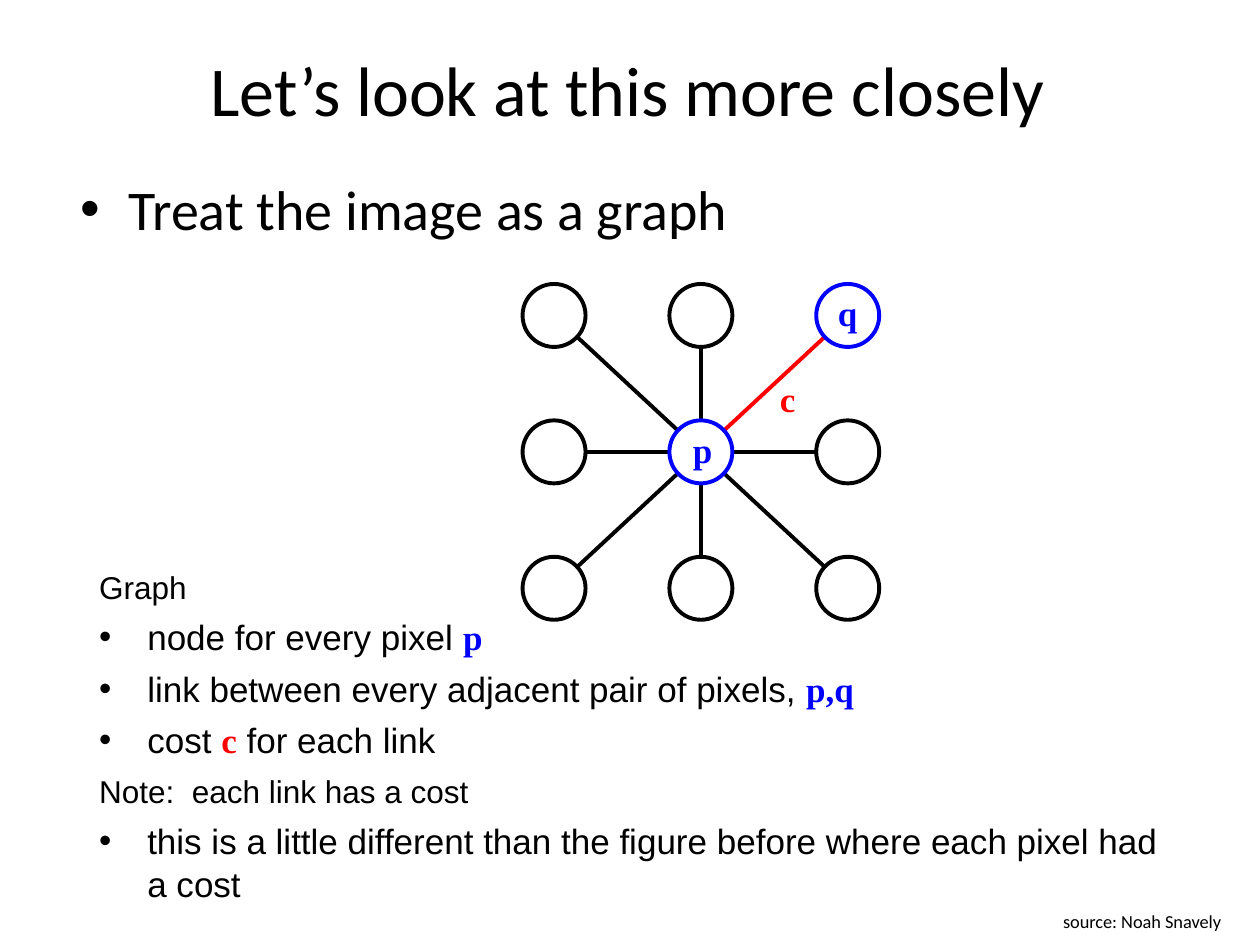
from lxml import etree
from pptx import Presentation
from pptx.dml.color import RGBColor
from pptx.enum.shapes import MSO_CONNECTOR, MSO_SHAPE
from pptx.enum.text import MSO_ANCHOR, PP_ALIGN
from pptx.oxml.ns import qn
from pptx.util import Cm, Pt

LINE = MSO_CONNECTOR.STRAIGHT
OVAL = MSO_SHAPE.OVAL
TOP, MIDDLE = MSO_ANCHOR.TOP, MSO_ANCHOR.MIDDLE
LEFT, CENTER = PP_ALIGN.LEFT, PP_ALIGN.CENTER

COLORS = {"ink": "000000", "paper": "FFFFFF", "node": "0000FF", "cost": "FF0000"}
TIGHT = (0, 0, 0.1, 0)
ROOMY = (0.25, 0.13, 0.36, 0.13)
PLAIN = (0.25, 0.13, 0.25, 0.13)


class Sheet:
    sans, serif, head = "Arial", "Times New Roman", "Calibri"
    width = Pt(2.25)

    def __init__(self, slide):
        self.slide = slide

    def color(self, name):
        return RGBColor.from_string(COLORS[name])

    def link(self, start, end, color):
        line = self.slide.shapes.add_connector(LINE, *map(Cm, start + end))
        line.line.color.rgb = self.color(color)
        line.line.width = self.width
        etree.SubElement(line._element.spPr, qn("a:effectLst"))

    def node(self, mid, size, color):
        x, y = mid
        oval = self.slide.shapes.add_shape(
            OVAL, Cm(x - size / 2), Cm(y - size / 2), Cm(size), Cm(size))
        oval.shadow.inherit = False
        oval.fill.solid()
        oval.fill.fore_color.rgb = self.color("paper")
        oval.line.color.rgb = self.color(color)
        oval.line.width = self.width

    def box(self, place, pad, wrap=True, anchor=TOP):
        frame = self.slide.shapes.add_textbox(*map(Cm, place)).text_frame
        frame.word_wrap = wrap
        frame.vertical_anchor = anchor
        (frame.margin_left, frame.margin_top,
         frame.margin_right, frame.margin_bottom) = map(Cm, pad)
        return frame

    def style(self, run, size, font, color="ink", bold=False):
        run.font.size = Pt(size)
        run.font.name = font
        run.font.bold = bold
        run.font.color.rgb = self.color(color)

    def indent(self, para, left, first=0, bullet=False):
        props = para._p.get_or_add_pPr()
        props.set("marL", str(Cm(left)))
        props.set("indent", str(Cm(first)))
        if bullet:
            etree.SubElement(props, qn("a:buFont")).set("typeface", self.sans)
            etree.SubElement(props, qn("a:buChar")).set("char", "•")

    def text(self, place, words, size, pad, wrap=True, anchor=TOP, align=LEFT):
        frame = self.box(place, pad, wrap, anchor)
        frame.text = words
        para = frame.paragraphs[0]
        para.alignment = align
        self.style(para.runs[0], size, self.head)
        return para

    def label(self, place, words, color, wrap=False):
        frame = self.box(place, TIGHT, wrap)
        frame.text = words
        para = frame.paragraphs[0]
        self.indent(para, 0.1)
        self.style(para.runs[0], 20, self.serif, color, True)

    def notes(self, place, rows):
        frame = self.box(place, TIGHT)
        for i, (bullet, parts) in enumerate(rows):
            para = frame.add_paragraph() if i else frame.paragraphs[0]
            para.line_spacing = 1.04
            para.space_before = Pt(4.5 if bullet else 5.5)
            self.indent(para, 1.07, -0.97, bullet)
            for words, color in parts:
                run = para.add_run()
                run.text = words
                mark = color != "ink"
                self.style(run, 20 if bullet else 18,
                           self.serif if mark else self.sans, color, mark)


def main():
    deck = Presentation()
    deck.slide_width, deck.slide_height = Cm(25.4), Cm(19.05)
    sheet = Sheet(deck.slides.add_slide(deck.slide_layouts[6]))

    hub, gap_x, gap_y = (14.13, 9.11), 2.96, 2.75
    grid = {(col, row): (hub[0] + col * gap_x, hub[1] + row * gap_y)
            for row in (-1, 0, 1) for col in (-1, 0, 1)}
    pixel, other = (0, 0), (1, -1)
    for cell, mid in grid.items():
        if cell != pixel:
            sheet.link(hub, mid, "cost" if cell == other else "ink")
    for cell, mid in grid.items():
        sheet.node(mid, 1.27, "node" if cell in (pixel, other) else "ink")

    sheet.text((1.27, 0.2, 22.86, 3.18), "Let’s look at this more closely",
               40, ROOMY, anchor=MIDDLE, align=CENTER)
    lead = sheet.text((1.27, 3.38, 22.86, 13.64), "Treat the image as a graph",
                      32, ROOMY)
    lead.space_before = Pt(6.4)
    sheet.indent(lead, 1.07, -0.97, True)

    sheet.notes((1.9, 11.43, 21.62, 7.14), [
        (False, [("Graph", "ink")]),
        (True, [("node for every pixel ", "ink"), ("p", "node")]),
        (True, [("link between every adjacent pair of pixels, ", "ink"),
                ("p,q", "node")]),
        (True, [("cost ", "ink"), ("c", "cost"), (" for each link", "ink")]),
        (False, [("Note:  each link has a cost", "ink")]),
        (True, [("this is a little different than the figure before "
                 "where each pixel had a cost", "ink")]),
    ])
    sheet.label((13.87, 8.64, 0.61, 0.86), "p", "node")
    sheet.label((16.79, 5.87, 0.61, 0.86), "q", "node")
    sheet.label((15.62, 7.62, 0.89, 1.24), "c", "cost", wrap=True)
    sheet.text((21.18, 18.21, 3.76, 0.71), "source: Noah Snavely",
               10.5, PLAIN, wrap=False)
    deck.save("out.pptx")


if __name__ == "__main__":
    main()
